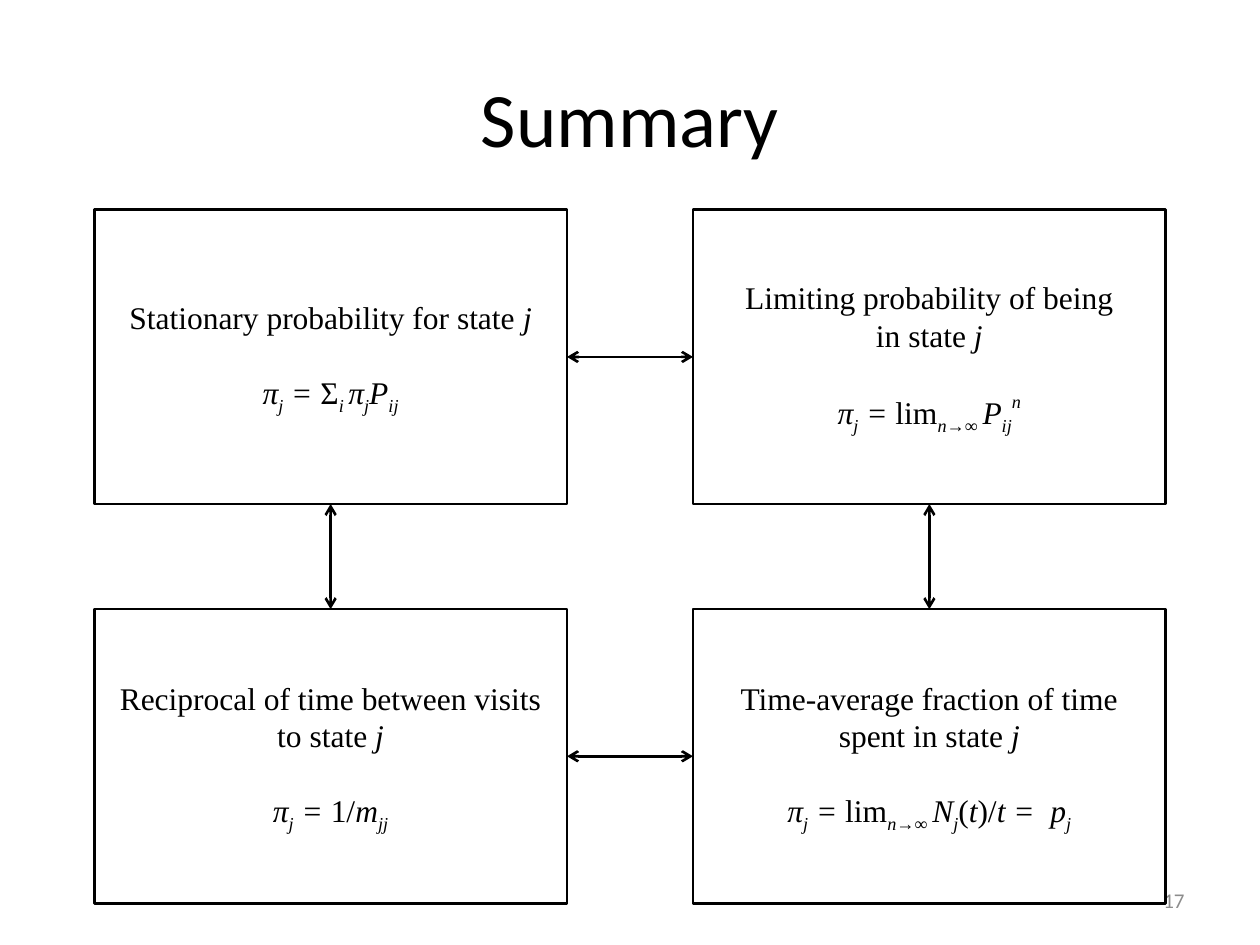
from typing import NamedTuple

from lxml import etree
from pptx import Presentation
from pptx.dml.color import RGBColor
from pptx.enum.shapes import MSO_CONNECTOR, MSO_SHAPE
from pptx.enum.text import MSO_ANCHOR, PP_ALIGN
from pptx.oxml.ns import qn
from pptx.util import Cm, Pt

BOX = MSO_SHAPE.FLOWCHART_PROCESS
LINE = MSO_CONNECTOR.STRAIGHT
MIDDLE = MSO_ANCHOR.MIDDLE
CENTER, RIGHT = PP_ALIGN.CENTER, PP_ALIGN.RIGHT
TOP_SIDE, LEFT_SIDE, BOTTOM_SIDE, RIGHT_SIDE = range(4)
COLORS = {"ink": "000000", "number": "8C8C8C"}
SERIF, SANS = "Times New Roman", "Calibri"

# Grid of boxes, in centimetres
PAGE_W, PAGE_H = 25.4, 19.05
BOX_W, BOX_H = 9.53, 5.93
GAP_X, GAP_Y = 2.54, 2.12
LEFT, TOP = (PAGE_W - 2 * BOX_W - GAP_X) / 2, 4.23


class Run(NamedTuple):
    text: str
    ital: bool = True
    base: int = 0  # shift in percent


class Card(NamedTuple):
    col: int
    row: int
    words: list[list[Run]]
    math: list[Run]


class Link(NamedTuple):
    start: int
    side: int
    end: int
    end_side: int


def up(text: str) -> Run:
    return Run(text, False)


def sub(text: str) -> Run:
    return Run(text, True, -25)


STATE = Run("j")
PI_J = [Run("π"), sub("j"), Run(" = ")]
LIMIT = [up("lim"), sub("n"), Run("→∞ ", False, -25)]

CARDS = [
    Card(0, 0, [[up("Stationary probability for state "), STATE]],
         PI_J + [up("Σ"), sub("i "), Run("π"), sub("j"), Run("P"), sub("ij")]),
    Card(1, 0, [[up("Limiting probability of being")], [up("in state "), STATE]],
         PI_J + LIMIT + [Run("P"), sub("ij"), Run("n", True, 50)]),
    Card(0, 1, [[up("Reciprocal of time between visits to state "), STATE]],
         PI_J + [up("1/"), Run("m"), sub("jj")]),
    Card(1, 1, [[up("Time-average fraction of time spent in state "), STATE]],
         PI_J + LIMIT + [Run("N"), sub("j"), up("("), Run("t"), up(")/"),
                         Run("t =  p"), sub("j")]),
]

LINKS = [
    Link(0, RIGHT_SIDE, 1, LEFT_SIDE),
    Link(2, RIGHT_SIDE, 3, LEFT_SIDE),
    Link(1, BOTTOM_SIDE, 3, TOP_SIDE),
    Link(0, BOTTOM_SIDE, 2, TOP_SIDE),
]


def color(name: str) -> RGBColor:
    return RGBColor.from_string(COLORS[name])


def style(para, face: str, size: int, ink: str, align) -> None:
    para.alignment = align
    para.font.name = face
    para.font.size = Pt(size)
    para.font.color.rgb = color(ink)


def stroke(line) -> None:
    line.color.rgb = color("ink")
    line.width = Pt(1.5)


def write(para, runs: list[Run]) -> None:
    style(para, SERIF, 18, "ink", CENTER)
    for part in runs:
        run = para.add_run()
        run.text = part.text
        run.font.italic = part.ital
        if part.base:
            run.font._element.set("baseline", str(part.base * 1000))


def draw_card(slide, card: Card):
    left = LEFT + card.col * (BOX_W + GAP_X)
    top = TOP + card.row * (BOX_H + GAP_Y)
    box = slide.shapes.add_shape(BOX, Cm(left), Cm(top), Cm(BOX_W), Cm(BOX_H))
    box.shadow.inherit = False
    box.fill.background()
    stroke(box.line)
    frame = box.text_frame
    frame.word_wrap = True
    frame.vertical_anchor = MIDDLE
    for i, runs in enumerate(card.words):
        write(frame.add_paragraph() if i else frame.paragraphs[0], runs)
    math = frame.add_paragraph()
    math.space_before = Pt(21)
    write(math, card.math)
    return box


def draw_link(slide, boxes: list, link: Link) -> None:
    line = slide.shapes.add_connector(LINE, 0, 0, 0, 0)
    line.begin_connect(boxes[link.start], link.side)
    line.end_connect(boxes[link.end], link.end_side)
    stroke(line.line)
    edge = line.line._get_or_add_ln()
    for tag in ("a:headEnd", "a:tailEnd"):
        etree.SubElement(edge, qn(tag), type="arrow")
    etree.SubElement(line._element.spPr, qn("a:effectLst"))


def main() -> None:
    deck = Presentation()
    deck.slide_width, deck.slide_height = Cm(PAGE_W), Cm(PAGE_H)
    slide = deck.slides.add_slide(deck.slide_layouts[5])

    # Title
    title = slide.shapes.title
    title.left, title.top = Cm(1.27), Cm(0.76)
    title.width, title.height = Cm(22.86), Cm(3.18)
    title.text_frame.text = "Summary"
    title.text_frame.vertical_anchor = MIDDLE
    style(title.text_frame.paragraphs[0], SANS, 44, "ink", CENTER)

    # Slide number
    number = slide.shapes.add_textbox(Cm(18.2), Cm(17.65), Cm(5.93), Cm(1.01))
    number.text_frame.word_wrap = True
    number.text_frame.vertical_anchor = MIDDLE
    number.text_frame.text = "17"
    style(number.text_frame.paragraphs[0], SANS, 12, "number", RIGHT)

    # Boxes and the arrows that join them
    boxes = [draw_card(slide, card) for card in CARDS]
    for link in LINKS:
        draw_link(slide, boxes, link)

    deck.save("out.pptx")


if __name__ == "__main__":
    main()
